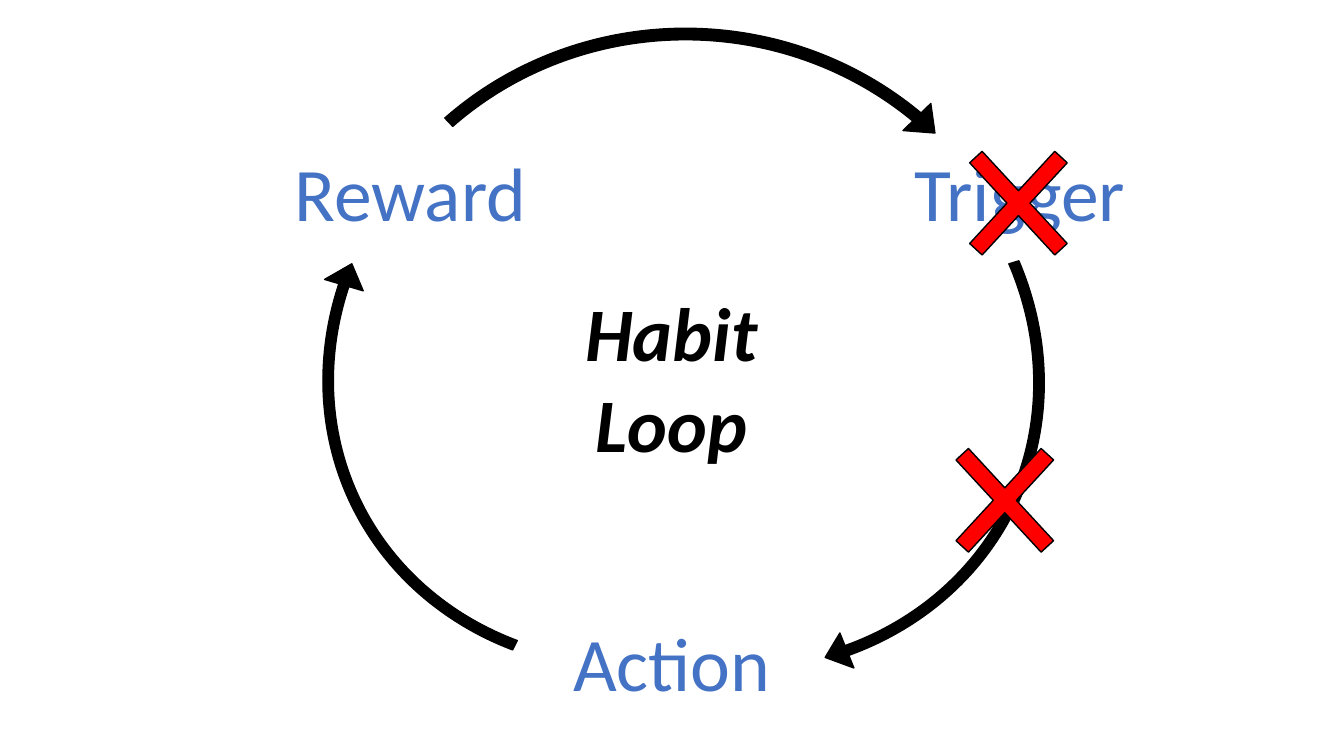
from pptx import Presentation
from pptx.dml.color import RGBColor
from pptx.enum.shapes import MSO_SHAPE
from pptx.enum.text import MSO_AUTO_SIZE, PP_ALIGN
from pptx.util import Emu, Pt

EMU_PER_PX = 9525
BLACK = RGBColor(0x00, 0x00, 0x00)
BLUE = RGBColor(0x44, 0x72, 0xC4)
RED = RGBColor(0xFF, 0x00, 0x00)

STAGES = [
    ("Trigger", (860, 134, 223, 97)),
    ("Action", (535, 582, 210, 97)),
    ("Reward", (270, 134, 242, 97)),
]
ARROWS = [
    ((320, -4, 619, 684), 244.3, 232.4, 3.1),
    ((362, -2, 619, 684), 116.1, 226.86, 2.9),
    ((300, 14, 709, 684), 3.7, 222.84, 2.7),
]
CROSSES = [(892, 109), (879, 392)]


def px(*lengths):
    """Turn pixel lengths into EMU."""
    return [Emu(length * EMU_PER_PX) for length in lengths]


def add_text(slide, text, box, *, color=BLUE, bold=False, italic=False):
    """Add a centred label with one paragraph per line of text."""
    frame = slide.shapes.add_textbox(*px(*box)).text_frame
    frame.word_wrap = False
    frame.auto_size = MSO_AUTO_SIZE.SHAPE_TO_FIT_TEXT
    frame.text = text
    for paragraph in frame.paragraphs:
        paragraph.alignment = PP_ALIGN.CENTER
        font = paragraph.font
        font.name = "Calibri"
        font.size = Pt(54)
        font.bold = bold
        font.italic = italic
        font.color.rgb = color


def add_outlined_shape(slide, kind, box, fill, adjustments):
    """Add a filled preset shape with a thin black outline."""
    shape = slide.shapes.add_shape(kind, *px(*box))
    shape.shadow.inherit = False
    shape.fill.solid()
    shape.fill.fore_color.rgb = fill
    shape.line.color.rgb = BLACK
    shape.line.width = Pt(1)
    for index, value in enumerate(adjustments):
        shape.adjustments[index] = value
    return shape


def add_loop_arrow(slide, box, rotation, start_degrees, head_percent):
    """Add one curved arrow, with angles in degrees and head width in percent."""
    head_angle, end_angle, start_angle = (
        degrees * 0.6 for degrees in (4, 308.12, start_degrees)
    )
    adjustments = (0.016, head_angle, end_angle, start_angle, head_percent / 100)
    arrow = add_outlined_shape(
        slide, MSO_SHAPE.CIRCULAR_ARROW, box, BLACK, adjustments
    )
    arrow.rotation = rotation


def add_cross(slide, left, top):
    """Add a red cross."""
    box = (left, top, 156, 169)
    add_outlined_shape(slide, MSO_SHAPE.MATH_MULTIPLY, box, RED, [0.1033])


def main():
    """Build the habit loop slide."""
    presentation = Presentation()
    presentation.slide_width, presentation.slide_height = px(1280, 720)
    slide = presentation.slides.add_slide(presentation.slide_layouts[6])

    add_text(slide, "Habit\nLoop", (547, 268, 185, 184),
             color=BLACK, bold=True, italic=True)
    for name, box in STAGES:
        add_text(slide, name, box)
    for arrow in ARROWS:
        add_loop_arrow(slide, *arrow)
    for position in CROSSES:
        add_cross(slide, *position)

    presentation.save("out.pptx")


if __name__ == "__main__":
    main()
